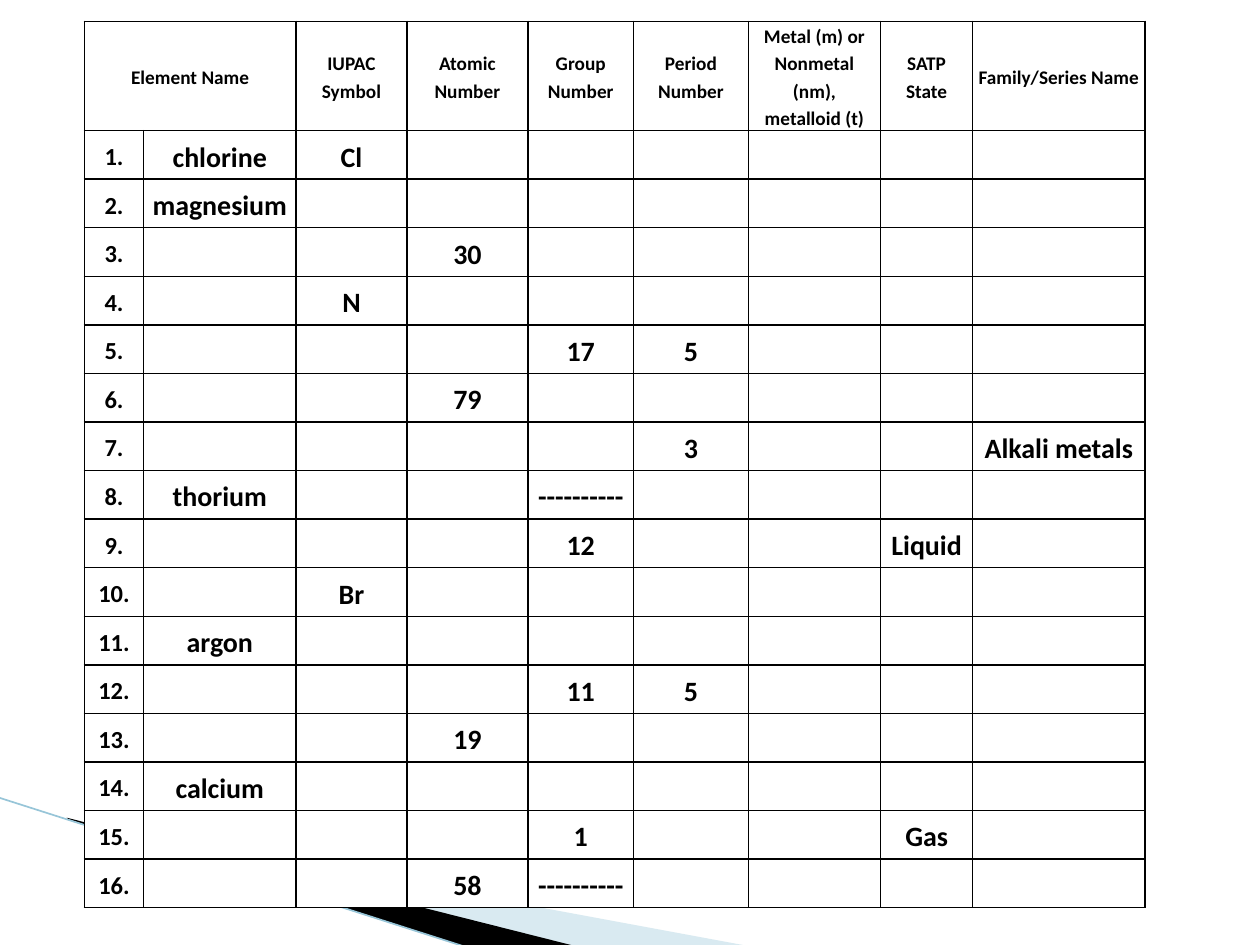
from lxml.etree import SubElement
from pptx import Presentation
from pptx.dml.color import RGBColor
from pptx.enum.shapes import MSO_CONNECTOR
from pptx.enum.text import MSO_ANCHOR, PP_ALIGN
from pptx.oxml.ns import qn
from pptx.util import Inches, Pt

HEADERS = ["Element Name", None, "IUPAC Symbol", "Atomic Number", "Group Number",
           "Period Number", "Metal (m) or Nonmetal (nm), metalloid (t)",
           "SATP State", "Family/Series Name"]
NAME, SYMBOL, ATOMIC, GROUP, PERIOD, STATE, FAMILY = 1, 2, 3, 4, 5, 7, 8
NO_GROUP = "----------"
# Known facts of each numbered element, by column
ELEMENTS = [
    {NAME: "chlorine", SYMBOL: "Cl"},
    {NAME: "magnesium"},
    {ATOMIC: "30"},
    {SYMBOL: "N"},
    {GROUP: "17", PERIOD: "5"},
    {ATOMIC: "79"},
    {PERIOD: "3", FAMILY: "Alkali metals"},
    {NAME: "thorium", GROUP: NO_GROUP},
    {GROUP: "12", STATE: "Liquid"},
    {SYMBOL: "Br"},
    {NAME: "argon"},
    {GROUP: "11", PERIOD: "5"},
    {ATOMIC: "19"},
    {NAME: "calcium"},
    {GROUP: "1", STATE: "Gas"},
    {ATOMIC: "58", GROUP: NO_GROUP},
]
COLUMN_WIDTHS = [0.47, 1.21, 0.88, 0.96, 0.84, 0.91, 1.05, 0.73, 1.37]
LEFT, TOP, HEIGHT, HEADER_HEIGHT = 0.67, 0.17, 7.03, 0.86
# Corner swooshes: colour, opacity in percent, outline points
SWOOSHES = [
    ("A0CBDC", 40, [(0.55, 6.51), (5.95, 7.51), (4.56, 7.51), (0.55, 6.5)]),
    ("000000", 100, [(0.53, 6.49), (4.57, 7.51), (3.72, 7.52), (0.54, 6.5)]),
]


def paint(fill, color):
    fill.solid()
    fill.fore_color.rgb = RGBColor.from_string(color)


def add_swoosh(page, color, opacity, points):
    corners = [(Inches(x), Inches(y)) for x, y in points]
    builder = page.shapes.build_freeform(*corners[0])
    builder.add_line_segments(corners[1:], close=True)
    shape = builder.convert_to_shape()
    shape.shadow.inherit = False
    paint(shape.fill, color)
    shape.line.fill.background()
    if opacity < 100:
        tint = shape.fill._xPr.find(qn("a:solidFill"))[0]
        SubElement(tint, qn("a:alpha"), val=str(opacity * 1000))


def style_cell(cell):
    properties = cell._tc.get_or_add_tcPr()
    for side in ("lnL", "lnR", "lnT", "lnB"):
        border = SubElement(properties, qn("a:" + side), w=str(Pt(1)))
        solid = SubElement(border, qn("a:solidFill"))
        SubElement(solid, qn("a:srgbClr"), val="000000")
    paint(cell.fill, "FFFFFF")
    cell.vertical_anchor = MSO_ANCHOR.MIDDLE
    cell.margin_left = cell.margin_right = Inches(0.04)
    cell.margin_top = cell.margin_bottom = 0


def write_cell(cell, text, size):
    para = cell.text_frame.paragraphs[0]
    para.text = text
    para.alignment = PP_ALIGN.CENTER
    para.line_spacing = 1.15
    para.font.name = "Calibri"
    para.font.size = Pt(size)
    para.font.bold = True
    para.font.color.rgb = RGBColor.from_string("000000")


deck = Presentation()
deck.slide_width, deck.slide_height = Inches(10), Inches(7.5)
page = deck.slides.add_slide(deck.slide_layouts[6])

# Decoration behind the table
for swoosh in SWOOSHES:
    add_swoosh(page, *swoosh)
edge = page.shapes.add_connector(MSO_CONNECTOR.STRAIGHT, Inches(-0.01), Inches(6.33),
                                 Inches(3.71), Inches(7.52))
edge.line.width = Pt(0.95)
edge.line.color.rgb = RGBColor.from_string("97C5D8")
SubElement(edge._element.spPr, qn("a:effectLst"))

# Table grid
table = page.shapes.add_table(len(ELEMENTS) + 1, len(HEADERS), Inches(LEFT), Inches(TOP),
                              Inches(sum(COLUMN_WIDTHS)), Inches(HEIGHT)).table
table.first_row = table.horz_banding = False
for column, width in zip(table.columns, COLUMN_WIDTHS):
    column.width = Inches(width)
for row in table.rows:
    row.height = Inches((HEIGHT - HEADER_HEIGHT) / len(ELEMENTS))
table.rows[0].height = Inches(HEADER_HEIGHT)
for cell in table.iter_cells():
    style_cell(cell)
table.cell(0, 0).merge(table.cell(0, 1))

# Table text
for column, title in enumerate(HEADERS):
    if title:
        write_cell(table.cell(0, column), title, 11)
for number, facts in enumerate(ELEMENTS, start=1):
    write_cell(table.cell(number, 0), f"{number}.", 14)
    for column, fact in facts.items():
        write_cell(table.cell(number, column), fact, 16)

deck.save("out.pptx")
